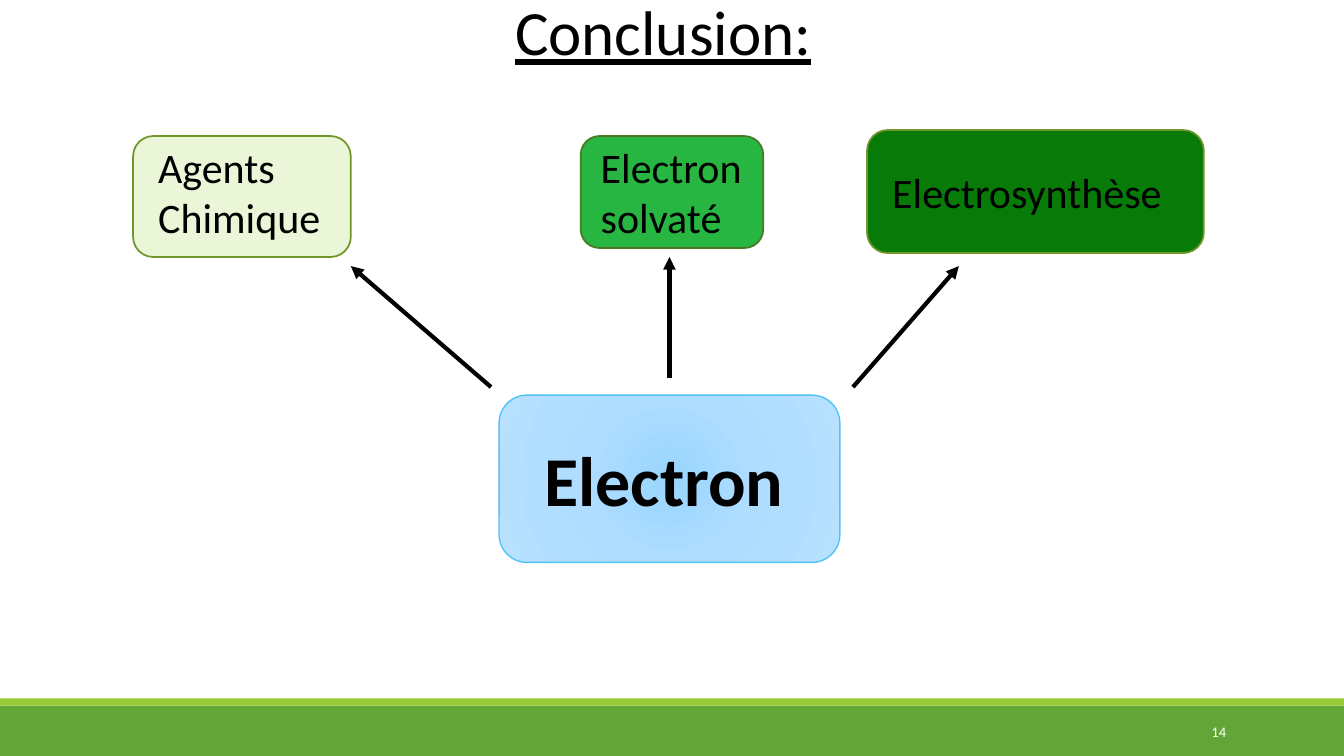
from lxml import etree
from pptx import Presentation
from pptx.dml.color import RGBColor
from pptx.enum.shapes import MSO_CONNECTOR, MSO_SHAPE
from pptx.enum.text import MSO_ANCHOR, PP_ALIGN
from pptx.oxml.ns import qn
from pptx.util import Inches, Pt

RECT, ROUNDED = MSO_SHAPE.RECTANGLE, MSO_SHAPE.ROUNDED_RECTANGLE
STRAIGHT = MSO_CONNECTOR.STRAIGHT
MIDDLE, TOP = MSO_ANCHOR.MIDDLE, MSO_ANCHOR.TOP
LEFT, RIGHT = PP_ALIGN.LEFT, PP_ALIGN.RIGHT
COLORS = {
    "black": "000000", "white": "FFFFFF",
    "footer": "63A537", "stripe": "99CB38",
    "pale": "EBF5D7", "bright": "26B641", "dark": "087A08",
    "olive": "719629", "moss": "497A29", "sky": "51C3F9",
    "blue_in": "99D5FE", "blue_mid": "AEDDFF", "blue_out": "B8E1FF",
}


def add_box(kind, box, fill, line=None, width=1.25):
    sp = s.shapes.add_shape(kind, *map(Inches, box))
    sp.shadow.inherit = False
    sp.fill.solid()
    sp.fill.fore_color.rgb = RGBColor.from_string(COLORS[fill])
    if line:
        sp.line.color.rgb = RGBColor.from_string(COLORS[line])
        sp.line.width = Pt(width)
    else:
        sp.line.fill.background()
    return sp


def add_text(box, text, size, color="black", anchor=TOP, align=LEFT):
    tf = s.shapes.add_textbox(*map(Inches, box)).text_frame
    tf.word_wrap = True
    tf.vertical_anchor = anchor
    p = tf.paragraphs[0]
    p.text = text
    p.alignment = align
    p.font.name = "Calibri"
    p.font.size = Pt(size)
    p.font.color.rgb = RGBColor.from_string(COLORS[color])
    return p


prs = Presentation()
prs.slide_width, prs.slide_height = Inches(13.33), Inches(7.5)
s = prs.slides.add_slide(prs.slide_layouts[6])

add_box(RECT, (0, 7, 13.33, 0.5), "footer")
add_box(RECT, (0, 6.93, 13.33, 0.07), "stripe")
add_text((5.01, -0.12, 6.05, 0.86), "Conclusion:", 45).font.underline = True

electron = add_box(ROUNDED, (4.95, 3.92, 3.38, 1.66), "blue_in", "sky", 1)
solid = electron._element.spPr.find(qn("a:solidFill"))
grad = etree.Element(qn("a:gradFill"), rotWithShape="1")
stops = etree.SubElement(grad, qn("a:gsLst"))
for pos, color in ((0, "blue_in"), (45, "blue_mid"), (100, "blue_out")):
    stop = etree.SubElement(stops, qn("a:gs"), pos=str(pos * 1000))
    etree.SubElement(stop, qn("a:srgbClr"), val=COLORS[color])
circle = etree.SubElement(grad, qn("a:path"), path="circle")
etree.SubElement(circle, qn("a:fillToRect"), {side: "100000" for side in "ltrb"})
solid.getparent().replace(solid, grad)
add_text((5.3, 4.28, 2.74, 0.94), "Electron", 50).font.bold = True

for ends in ((4.87, 3.84, 3.48, 2.64), (6.64, 3.75, 6.64, 2.55), (8.46, 3.84, 9.51, 2.64)):
    arrow = s.shapes.add_connector(STRAIGHT, *map(Inches, ends))
    arrow.line.color.rgb = RGBColor.from_string(COLORS["black"])
    arrow.line.width = Pt(3)
    etree.SubElement(arrow.line._get_or_add_ln(), qn("a:tailEnd"), type="triangle")
    etree.SubElement(arrow._element.spPr, qn("a:effectLst"))

METHODS = [
    ("Agents Chimique", (1.32, 1.35, 2.16, 1.2), "pale", "olive", (1.47, 1.35, 2.01, 1.11)),
    ("Electron solvaté", (5.76, 1.35, 1.81, 1.11), "bright", "moss", (5.86, 1.35, 2.03, 1.11)),
    ("Electrosynthèse", (8.6, 1.29, 3.34, 1.22), "dark", "olive", (8.75, 1.6, 3.58, 0.61)),
]
for text, box, fill, line, text_box in METHODS:
    add_box(ROUNDED, box, fill, line)
    add_text(text_box, text, 30)

add_text((10.83, 7.06, 1.43, 0.4), "14", 10.5, "white", MIDDLE, RIGHT)

prs.save("out.pptx")
